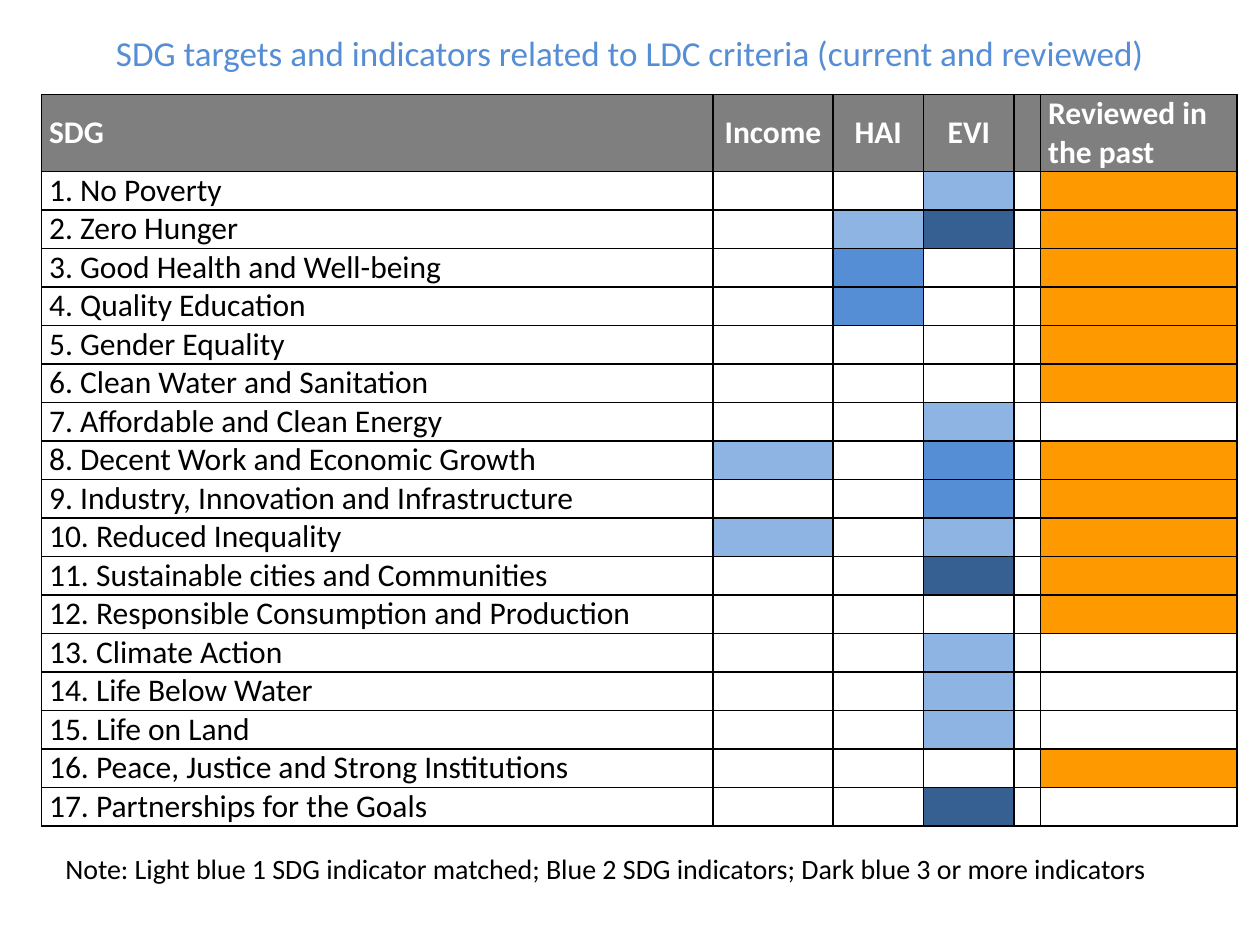
from lxml.etree import SubElement
from pptx import Presentation
from pptx.dml.color import RGBColor
from pptx.enum.text import MSO_ANCHOR as Anchor, PP_ALIGN as Align
from pptx.oxml.ns import qn
from pptx.util import Inches, Pt

# Content
TITLE = "SDG targets and indicators related to LDC criteria (current and reviewed)"
NOTE = ("Note: Light blue 1 SDG indicator matched; Blue 2 SDG indicators; "
        "Dark blue 3 or more indicators")
HEADERS = ["SDG", "Income", "HAI", "EVI", "", "Reviewed in the past"]

# Goal, then indicators matched for income, HAI and EVI (3 = 3 or more), then reviewed
GOALS = [
    ("No Poverty", 0, 0, 1, True),
    ("Zero Hunger", 0, 1, 3, True),
    ("Good Health and Well-being", 0, 2, 0, True),
    ("Quality Education", 0, 2, 0, True),
    ("Gender Equality", 0, 0, 0, True),
    ("Clean Water and Sanitation", 0, 0, 0, True),
    ("Affordable and Clean Energy", 0, 0, 1, False),
    ("Decent Work and Economic Growth", 1, 0, 2, True),
    ("Industry, Innovation and Infrastructure", 0, 0, 2, True),
    ("Reduced Inequality", 1, 0, 1, True),
    ("Sustainable cities and Communities", 0, 0, 3, True),
    ("Responsible Consumption and Production", 0, 0, 0, True),
    ("Climate Action", 0, 0, 1, False),
    ("Life Below Water", 0, 0, 1, False),
    ("Life on Land", 0, 0, 1, False),
    ("Peace, Justice and Strong Institutions", 0, 0, 0, True),
    ("Partnerships for the Goals", 0, 0, 3, False),
]

# Style and grid, in inches
FONT = "Calibri"
BLACK, WHITE, GRAY, BLUE, ORANGE = "000000", "FFFFFF", "7F7F7F", "558ED5", "FF9900"
MATCH_COLORS = [WHITE, "8EB4E3", BLUE, "376092"]
COLUMNS = [5.33, 0.95, 0.72, 0.72, 0.21, 1.56]
CENTERED = (1, 2, 3)
LEFT, TOP, ROW_HEIGHT = 0.33, 0.75, 0.3


def rgb(color):
    return RGBColor.from_string(color)


def add_text(frame, text, size, color, bold=False, align=Align.LEFT):
    paragraph = frame.paragraphs[0]
    paragraph.alignment = align
    run = paragraph.add_run()
    run.text = text
    run.font.name, run.font.size, run.font.bold = FONT, Pt(size), bold
    run.font.color.rgb = rgb(color)


def add_text_box(slide, box, text, size, color, align=Align.LEFT, anchor=Anchor.TOP):
    frame = slide.shapes.add_textbox(*map(Inches, box)).text_frame
    frame.word_wrap = True
    frame.vertical_anchor = anchor
    add_text(frame, text, size, color, align=align)


def style_cell(cell, color):
    cell.margin_left = cell.margin_right = Inches(0.06)
    cell.margin_top = cell.margin_bottom = 0
    cell.vertical_anchor = Anchor.MIDDLE
    # Borders come before the fill in the cell properties
    properties = cell._tc.get_or_add_tcPr()
    for side in ("a:lnL", "a:lnR", "a:lnT", "a:lnB"):
        line = SubElement(properties, qn(side), w=str(Pt(1)))
        SubElement(SubElement(line, qn("a:solidFill")), qn("a:srgbClr"), val=BLACK)
    cell.fill.solid()
    cell.fill.fore_color.rgb = rgb(color)


presentation = Presentation()
presentation.slide_width, presentation.slide_height = Inches(10), Inches(7.5)
slide = presentation.slides.add_slide(presentation.slide_layouts[6])

# Table
heights = [2 * ROW_HEIGHT] + [ROW_HEIGHT] * len(GOALS)
table = slide.shapes.add_table(
    len(heights), len(COLUMNS),
    *map(Inches, (LEFT, TOP, sum(COLUMNS), sum(heights)))).table
table.first_row = table.horz_banding = False
for column, width in zip(table.columns, COLUMNS):
    column.width = Inches(width)
for row, height in zip(table.rows, heights):
    row.height = Inches(height)

# Header row
for index, header in enumerate(HEADERS):
    cell = table.cell(0, index)
    style_cell(cell, GRAY)
    if header:
        align = Align.CENTER if index in CENTERED else Align.LEFT
        add_text(cell.text_frame, header, 18, WHITE, True, align)

# Goal rows
for number, (goal, *matches, reviewed) in enumerate(GOALS, 1):
    colors = [WHITE, *(MATCH_COLORS[count] for count in matches),
              WHITE, ORANGE if reviewed else WHITE]
    for index, color in enumerate(colors):
        style_cell(table.cell(number, index), color)
    add_text(table.cell(number, 0).text_frame, f"{number}. {goal}", 18, BLACK)

# Note and title
add_text_box(slide, (0.42, 6.71, 8.92, 0.37), NOTE, 16, BLACK)
add_text_box(slide, (0.5, 0.08, 9, 0.67), TITLE, 20, BLUE, Align.CENTER, Anchor.MIDDLE)

presentation.save("out.pptx")
